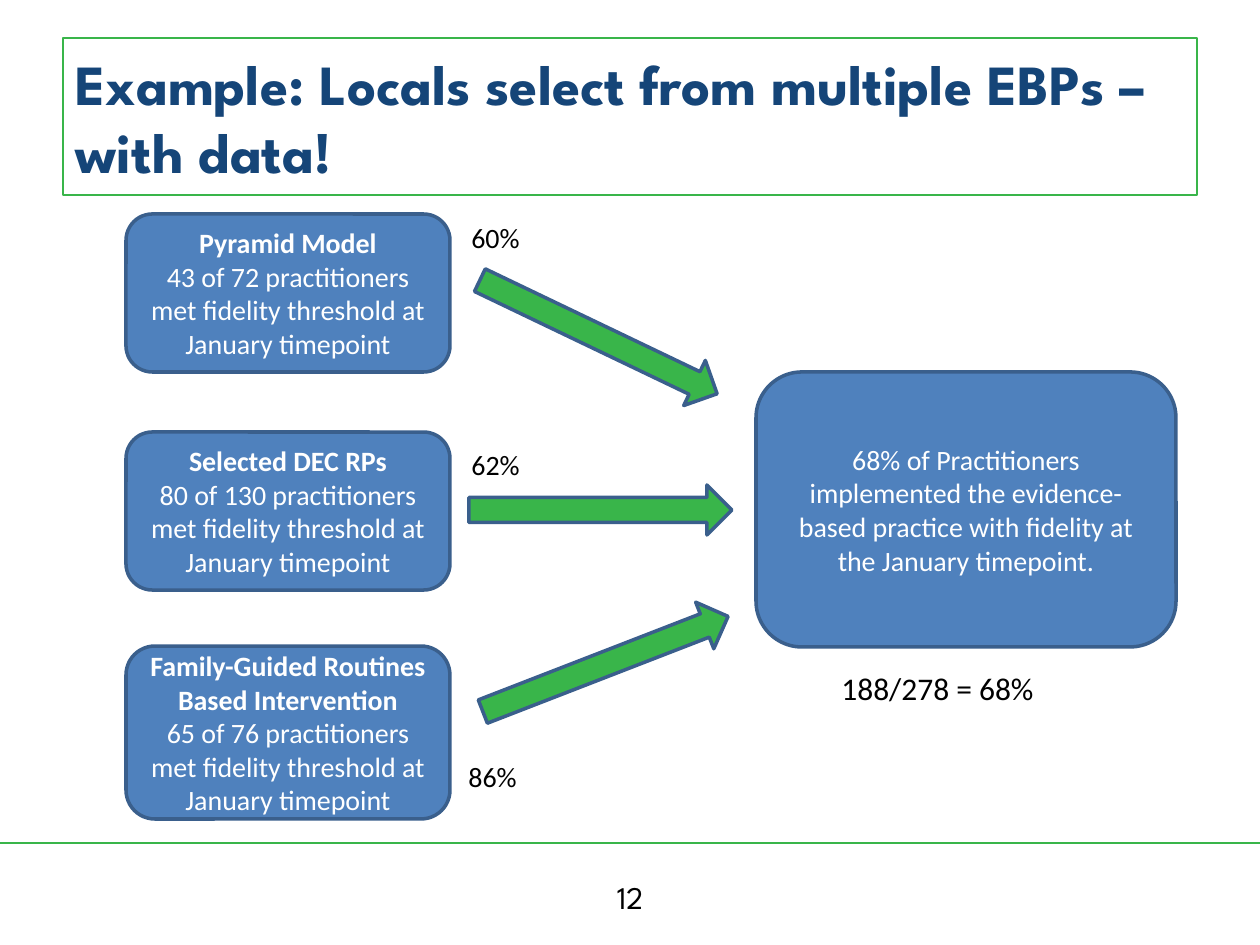
"""Build the slide on locals selecting from multiple EBPs, with fidelity data."""
import pptx
import pptx.util
import pptx.dml.color
import pptx.enum.shapes
import pptx.enum.text
import pptx.oxml.ns

RGB = pptx.dml.color.RGBColor
SHAPE = pptx.enum.shapes.MSO_SHAPE
ALIGN = pptx.enum.text.PP_ALIGN
ANCHOR = pptx.enum.text.MSO_ANCHOR
FIT = pptx.enum.text.MSO_AUTO_SIZE
Pt = pptx.util.Pt

GREEN = RGB(0x39, 0xB5, 0x4A)
BLUE = RGB(0x4F, 0x81, 0xBD)
EDGE = RGB(0x3A, 0x5F, 0x8C)
NAVY = RGB(0x15, 0x45, 0x78)
WHITE = RGB(0xFF, 0xFF, 0xFF)
BLACK = RGB(0x00, 0x00, 0x00)

TITLE = "Example: Locals select from multiple EBPs – with data!"
TITLE_BOX = (63, 38, 1134, 157)
FOOTER_Y = 843

RESULT = "met fidelity threshold at January timepoint"
PRACTICES = [
    ("Pyramid Model", "43 of 72 practitioners", 214, 158),
    ("Selected DEC RPs", "80 of 130 practitioners", 432, 158),
    ("Family-Guided Routines Based Intervention", "65 of 76 practitioners", 646, 173),
]
PRACTICE_X, PRACTICE_W = 126, 324

SUMMARY = ("68% of Practitioners implemented the evidence-based practice "
           "with fidelity at the January timepoint.")
SUMMARY_BOX = (756, 372, 420, 275)

ARROWS = [(467, 312, 25.6), (469, 485, 0), (474, 639, 338.8)]
ARROW_SIZE = (263, 50)

LABELS = [
    ("60%", (459, 214, 140, 47), 16, "Calibri", ALIGN.LEFT),
    ("62%", (459, 441, 108, 47), 16, "Calibri", ALIGN.LEFT),
    ("86%", (456, 753, 130, 47), 16, "Calibri", ALIGN.LEFT),
    ("188/278 = 68%", (829, 663, 347, 50), 18, "Calibri", ALIGN.LEFT),
    ("12", (483, 872, 294, 50), 18, "League Spartan", ALIGN.CENTER),
]


def px(*values):
    return [pptx.util.Emu(round(v * 914400 / 126)) for v in values]


def add_text(p, text, color, **font):
    r = p.add_run()
    r.text = text
    r.font.color.rgb = color
    for name, value in font.items():
        setattr(r.font, name, value)


def add_block(s, kind, box, fill):
    sp = s.shapes.add_shape(kind, *px(*box))
    sp.shadow.inherit = False
    sp.fill.solid()
    sp.fill.fore_color.rgb = fill
    sp.line.color.rgb = EDGE
    sp.line.width = Pt(2)
    return sp


def add_card(s, box, lines):
    tf = add_block(s, SHAPE.ROUNDED_RECTANGLE, box, BLUE).text_frame
    tf.word_wrap = True
    tf.vertical_anchor = ANCHOR.MIDDLE
    for i, (text, bold) in enumerate(lines):
        p = tf.add_paragraph() if i else tf.paragraphs[0]
        p.alignment = ALIGN.CENTER
        add_text(p, text, WHITE, size=Pt(16), name="Calibri", bold=bold)


def add_title(s):
    sp = s.shapes.title
    sp.left, sp.top, sp.width, sp.height = px(*TITLE_BOX)
    sp.line.color.rgb = GREEN
    sp.line.width = Pt(1)
    tf = sp.text_frame
    for name, value in {"word_wrap": True, "auto_size": FIT.NONE,
                        "vertical_anchor": ANCHOR.MIDDLE}.items():
        setattr(tf, name, value)
    p = tf.paragraphs[0]
    p.alignment = ALIGN.LEFT
    add_text(p, TITLE, NAVY, size=Pt(32.4), name="League Spartan", bold=True)


def add_footer_line(s):
    line = s.shapes.add_connector(pptx.enum.shapes.MSO_CONNECTOR.STRAIGHT,
                                  *px(0, FOOTER_Y, 1260, FOOTER_Y))
    line.line.color.rgb = GREEN
    line.line.width = Pt(1.5)
    pr = line._element.spPr
    pr.append(pr.makeelement(pptx.oxml.ns.qn("a:effectLst"), {}))


def main():
    prs = pptx.Presentation()
    prs.slide_width, prs.slide_height = px(1260, 945)
    s = prs.slides.add_slide(prs.slide_layouts[5])
    add_footer_line(s)
    add_title(s)
    for name, count, y, h in PRACTICES:
        add_card(s, (PRACTICE_X, y, PRACTICE_W, h),
                 [(name, True), (f"{count} {RESULT}", False)])
    add_card(s, SUMMARY_BOX, [(SUMMARY, False)])
    for x, y, angle in ARROWS:
        add_block(s, SHAPE.RIGHT_ARROW, (x, y, *ARROW_SIZE), GREEN).rotation = angle
    for text, box, size, font, align in LABELS:
        tf = s.shapes.add_textbox(*px(*box)).text_frame
        tf.word_wrap = True
        p = tf.paragraphs[0]
        p.alignment = align
        add_text(p, text, BLACK, size=Pt(size), name=font)
    prs.save("out.pptx")


if __name__ == "__main__":
    main()
